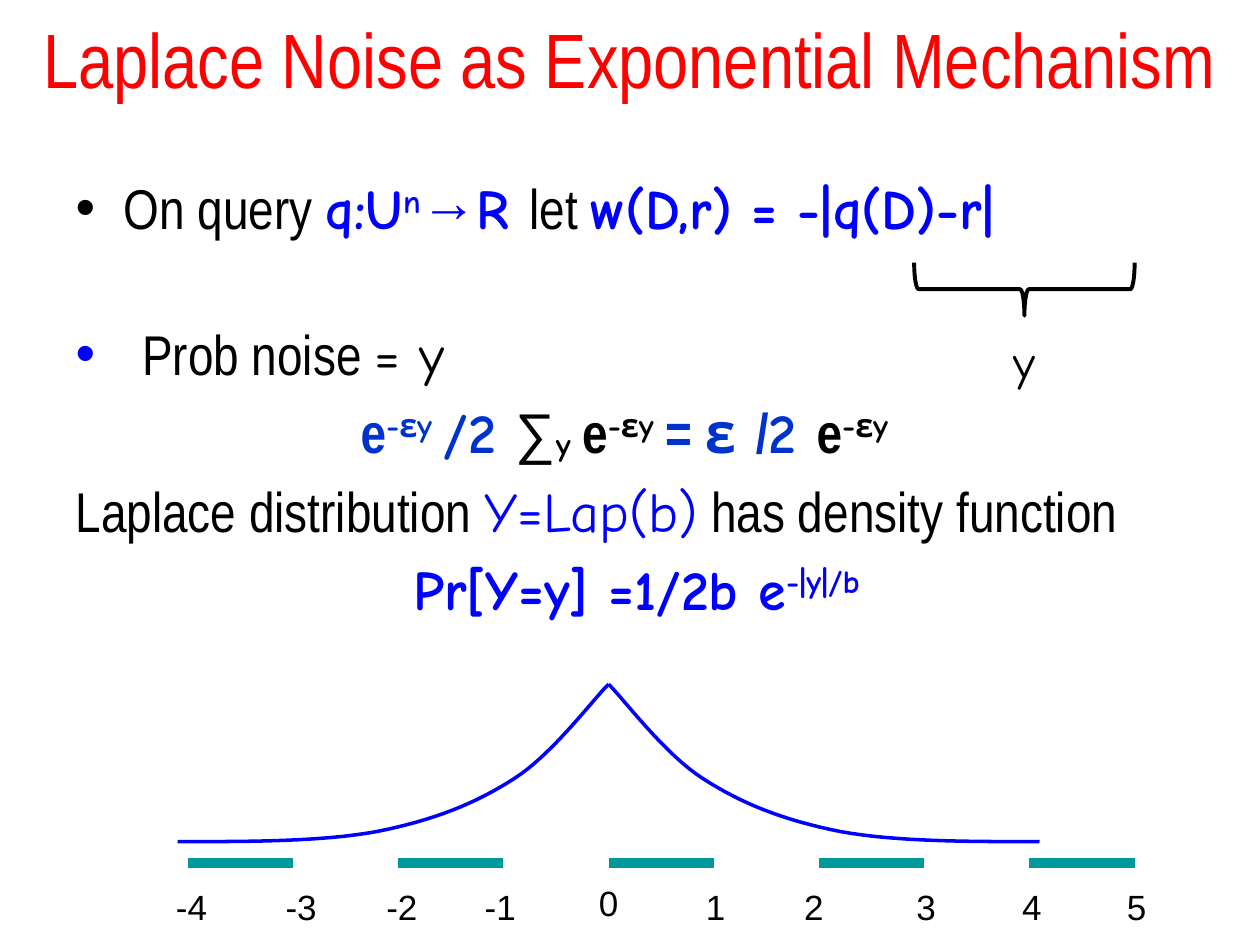
from lxml.etree import SubElement
from pptx import Presentation
from pptx.dml.color import RGBColor
from pptx.enum.shapes import MSO_CONNECTOR as Connector, MSO_SHAPE as Shape
from pptx.enum.text import MSO_ANCHOR as Anchor, MSO_AUTO_SIZE as AutoSize, PP_ALIGN as Align
from pptx.oxml.ns import qn
from pptx.util import Inches, Pt

WIDTH, HEIGHT = 10, 7.5
NARROW, COMIC, PLAIN = "Arial Narrow", "Comic Neue", "Arial"
BLACK, RED, BLUE, NAVY, TEAL = "000000", "FF0000", "0000FF", "0033CC", "009999"

ORIGIN, UNIT = 4.83, 0.835  # place of zero and length of one step on the axis
AXIS_Y = 6.85
LABEL_CENTRES = {-4: 1.52, -3: 2.39, -2: 3.19, -1: 3.97, 0: 4.83,
                 1: 5.68, 2: 6.46, 3: 7.35, 4: 8.19, 5: 9.02}

# Bezier pieces of the density: (distance from zero, height on the page)
DENSITY = [
    [(3.42, 6.68), (2.85, 6.68), (2.28, 6.68), (1.84, 6.6)],
    [(1.84, 6.6), (1.39, 6.51), (1.06, 6.38), (0.75, 6.18)],
    [(0.75, 6.18), (0.45, 5.99), (0.13, 5.56), (0, 5.43)],
]

# Each run: text, font, colour, bold, baseline shift in percent
QUERY = [
    ("On query ", NARROW, BLACK, False, 0), ("q:U", COMIC, BLUE, True, 0),
    ("n", COMIC, BLUE, True, 30), ("→", NARROW, BLUE, True, 0),
    ("R ", COMIC, BLUE, True, 0), ("let ", NARROW, BLACK, False, 0),
    ("w(D,r) = -|q(D)-r|", COMIC, BLUE, True, 0),
]
NOISE = [
    (" ", COMIC, BLUE, False, 0), ("Prob noise ", NARROW, BLACK, False, 0),
    ("= y", COMIC, BLACK, False, 0),
]
RATIO = [
    ("e", NARROW, NAVY, True, 0), ("-εy ", COMIC, NAVY, True, 30),
    ("/2 ", COMIC, NAVY, True, 0), ("∑", NARROW, BLACK, False, 0),
    ("y ", COMIC, BLACK, True, -5), ("e", NARROW, BLACK, True, 0),
    ("-εy ", COMIC, BLACK, True, 30), ("= ", NARROW, NAVY, True, 0),
    ("ε ", COMIC, NAVY, True, 0), ("/", NARROW, NAVY, True, 0),
    ("2 ", COMIC, NAVY, True, 0), ("e", NARROW, BLACK, True, 0),
    ("-εy ", COMIC, BLACK, True, 30),
]
LAPLACE = [
    ("Laplace distribution ", NARROW, BLACK, False, 0),
    ("Y=Lap(b)", COMIC, BLUE, False, 0),
    (" has density function", NARROW, BLACK, False, 0),
]
FORMULA = [
    (" ", NARROW, BLACK, False, 0), ("Pr[Y=y] =1/2b e", COMIC, BLUE, True, 0),
    ("-|y|/b", COMIC, BLUE, True, 30),
]


def color(value):
    return RGBColor.from_string(value)


def place(shape, left, top, width, height):
    shape.left, shape.top = Inches(left), Inches(top)
    shape.width, shape.height = Inches(width), Inches(height)


def style_font(font, size, name, value):
    font.size, font.name = Pt(size), name
    font.color.rgb = color(value)


def style_line(shape, value, width):
    shape.line.color.rgb = color(value)
    shape.line.width = Pt(width)


def set_title(page, text):
    title = page.shapes.title
    place(title, 0, -0.17, WIDTH, 1.25)
    title.text_frame.vertical_anchor = Anchor.MIDDLE
    para = title.text_frame.paragraphs[0]
    para.text, para.alignment = text, Align.CENTER
    style_font(para.font, 44, NARROW, RED)


def write_runs(para, runs, bullet=False, align=Align.LEFT):
    para.alignment = align
    props = para._p.get_or_add_pPr()
    props.set("marL", str(Inches(0.38)))
    props.set("indent", str(Inches(-0.38)))
    if bullet:
        SubElement(props, qn("a:buChar")).set("char", "•")
    else:
        SubElement(props, qn("a:buNone"))
    for text, name, value, bold, shift in runs:
        span = para.add_run()
        span.text = text
        style_font(span.font, 32, name, value)
        span.font.bold = bold
        if shift:
            span._r.get_or_add_rPr().set("baseline", str(shift * 1000))


def fill_body(page):
    body = page.placeholders[1]
    place(body, 0.5, 1.33, 9, 4.95)
    frame = body.text_frame
    frame.auto_size = AutoSize.NONE
    query = frame.paragraphs[0]
    write_runs(query, QUERY, bullet=True)
    query.add_line_break()
    write_runs(frame.add_paragraph(), NOISE, bullet=True)
    ratio = frame.add_paragraph()
    ratio.level = 1
    write_runs(ratio, RATIO, align=Align.CENTER)
    write_runs(frame.add_paragraph(), LAPLACE)
    write_runs(frame.add_paragraph(), FORMULA, align=Align.CENTER)


def add_label(page, text, centre, top, height, size, name):
    width = 0.41 if len(text) == 1 else 0.48
    box = page.shapes.add_textbox(Inches(centre - width / 2), Inches(top),
                                  Inches(width), Inches(height))
    box.text_frame.word_wrap = False
    box.text_frame.auto_size = AutoSize.SHAPE_TO_FIT_TEXT
    para = box.text_frame.paragraphs[0]
    para.text, para.alignment = text, Align.CENTER
    style_font(para.font, size, name, BLACK)


def add_brace(page):
    brace = page.shapes.add_shape(Shape.RIGHT_BRACE, Inches(7.92), Inches(1.42),
                                  Inches(0.42), Inches(1.75))
    brace.rotation = 90
    brace.shadow.inherit = False
    brace.fill.background()
    style_line(brace, BLACK, 2.25)


def bezier_point(controls, t):
    weights = ((1 - t) ** 3, 3 * t * (1 - t) ** 2, 3 * t * t * (1 - t), t ** 3)
    return tuple(sum(w * point[axis] for w, point in zip(weights, controls))
                 for axis in (0, 1))


def add_density_half(page, side, steps=16):
    """Draw one half of the density; side is -1 for left and 1 for right."""
    points = [bezier_point(piece, step / steps)
              for piece in DENSITY for step in range(steps + 1)]
    outline = [(Inches(ORIGIN + side * x), Inches(y)) for x, y in points]
    builder = page.shapes.build_freeform(*outline[0])
    builder.add_line_segments(outline[1:], close=False)
    curve = builder.convert_to_shape()
    curve.shadow.inherit = False
    curve.fill.background()
    style_line(curve, BLUE, 2)


def add_axis(page):
    for start in range(-4, 5, 2):
        left = ORIGIN + start * UNIT
        dash = page.shapes.add_connector(
            Connector.STRAIGHT, Inches(left), Inches(AXIS_Y),
            Inches(left + UNIT), Inches(AXIS_Y))
        style_line(dash, TEAL, 6)
        SubElement(dash._element.spPr, qn("a:effectLst"))
    for number, centre in LABEL_CENTRES.items():
        top = 6.98 if number else 6.95
        add_label(page, str(number), centre, top, 0.43, 20, PLAIN)


def main():
    deck = Presentation()
    deck.slide_width, deck.slide_height = Inches(WIDTH), Inches(HEIGHT)
    page = deck.slides.add_slide(deck.slide_layouts[1])
    set_title(page, "Laplace Noise as Exponential Mechanism")
    fill_body(page)
    add_brace(page)
    add_label(page, "y", 8.13, 2.58, 0.57, 28, COMIC)
    for side in (-1, 1):
        add_density_half(page, side)
    add_axis(page)
    deck.save("out.pptx")


if __name__ == "__main__":
    main()
